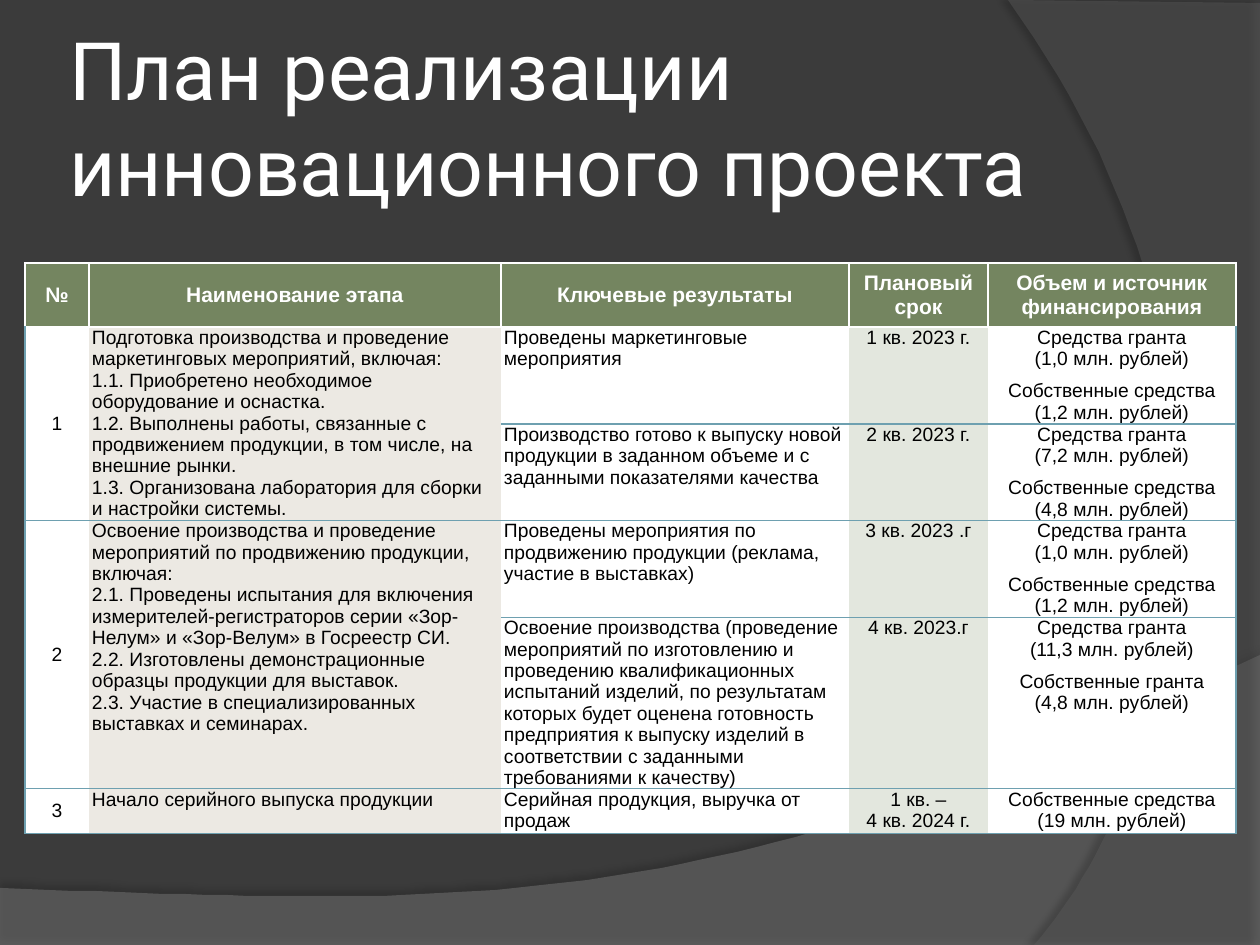
from copy import deepcopy
from dataclasses import dataclass

from lxml.etree import SubElement as Sub
from pptx import Presentation
from pptx.dml.color import RGBColor as RGB
from pptx.enum.text import MSO_ANCHOR as Anchor, MSO_AUTO_SIZE as Auto, PP_ALIGN as Align
from pptx.oxml.ns import qn
from pptx.util import Pt

SCALE = 914400 / 126
WHITE, BLACK, BLUE, GREEN = "FFFFFF", "000000", "6EA0B0", "748560"
COLS = [64, 412, 348, 139, 248]
ROWS = [64, 97, 96, 97, 171, 45]
TINTS = [WHITE, "ECE9E3", WHITE, "E3E7DE", WHITE]
HEAD = {"name": "Arial", "size": Pt(12), "bold": True}
BODY = {"name": "Arial", "size": Pt(11), "bold": False}
TITLE = {"name": "Roboto", "size": Pt(46), "bold": False}

# "\n" breaks a line, "|" starts a paragraph; None continues the cell above.
CELLS = [
    ["№", "Наименование этапа", "Ключевые результаты", "Плановый срок",
     "Объем и источник финансирования"],
    ["1",
     "Подготовка производства и проведение маркетинговых мероприятий, включая:\n"
     "1.1. Приобретено необходимое оборудование и оснастка.\n"
     "1.2. Выполнены работы, связанные с продвижением продукции, в том числе, "
     "на внешние рынки.\n"
     "1.3. Организована лаборатория для сборки и настройки системы.",
     "Проведены маркетинговые мероприятия",
     "1 кв. 2023 г.",
     "Средства гранта\n(1,0 млн. рублей)|Собственные средства\n(1,2 млн. рублей)"],
    [None, None,
     "Производство готово к выпуску новой продукции в заданном объеме и с "
     "заданными показателями качества",
     "2 кв. 2023 г.",
     "Средства гранта\n(7,2 млн. рублей)|Собственные средства\n(4,8 млн. рублей)"],
    ["2",
     "Освоение производства и проведение мероприятий по продвижению продукции,\n"
     "включая:\n"
     "2.1. Проведены испытания для включения измерителей-регистраторов серии "
     "«Зор-Нелум» и «Зор-Велум» в Госреестр СИ.\n"
     "2.2. Изготовлены демонстрационные образцы продукции для выставок.\n"
     "2.3. Участие в специализированных выставках и семинарах.",
     "Проведены мероприятия по продвижению продукции (реклама, участие в выставках)",
     "3 кв. 2023 .г",
     "Средства гранта\n(1,0 млн. рублей)|Собственные средства\n(1,2 млн. рублей)"],
    [None, None,
     "Освоение производства (проведение мероприятий по изготовлению и проведению "
     "квалификационных испытаний изделий, по результатам которых будет оценена "
     "готовность предприятия к выпуску изделий в соответствии с заданными "
     "требованиями к качеству)",
     "4 кв. 2023.г",
     "Средства гранта\n(11,3 млн. рублей)|Собственные гранта\n(4,8 млн. рублей)"],
    ["3", "Начало серийного выпуска продукции",
     "Серийная продукция, выручка от продаж",
     "1 кв. –\n4 кв. 2024 г.",
     "Собственные средства\n(19 млн. рублей)"],
]


@dataclass
class Wave:
    """Corner points, then cubic curves given as three points each."""
    start: list
    curves: list
    tint: str
    alpha: int
    shade: int
    dist: float
    angle: int


WAVES = [
    Wave([(0, 888), (0, 946), (1260, 946), (1260, 655)],
         [((704, 919), (493, 906), (0, 888))], "7F7F7F", 45, 35, 3.5, 270),
    Wave([(1260, 3), (1260, 945), (1034, 945)],
         [((1178, 780), (1283, 378), (1008, 0))], "5E5E5E", 40, 45, 4, 180),
]


def px(n: int) -> int:
    return round(n * SCALE)


def rgb(code: str) -> RGB:
    return RGB.from_string(code)


def put(obj, vals: dict) -> None:
    for key, val in vals.items():
        setattr(obj, key, val)


def paint(obj, code: str) -> None:
    obj.fill.solid()
    obj.fill.fore_color.rgb = rgb(code)


def bend(p0: tuple, curve: tuple, steps: int = 60) -> list:
    """Points along a cubic curve, without its start."""
    pts = (p0, *curve)
    out = []
    for i in range(1, steps + 1):
        t = i / steps
        u = 1 - t
        mix = (u ** 3, 3 * u * u * t, 3 * u * t * t, t ** 3)
        out.append(tuple(sum(m * p[k] for m, p in zip(mix, pts)) for k in (0, 1)))
    return out


def draw_wave(slide, wave: Wave) -> None:
    pts = list(wave.start)
    for curve in wave.curves:
        pts += bend(pts[-1], curve)
    pen = slide.shapes.build_freeform(*pts[0], scale=SCALE)
    pen.add_line_segments(pts[1:], close=True)
    shape = pen.convert_to_shape()
    paint(shape, wave.tint)
    shape.line.fill.background()
    shape.shadow.inherit = False
    props = shape.element.spPr
    tone = props.find(qn("a:solidFill"))[0]
    Sub(tone, qn("a:alpha"), val=str(wave.alpha * 1000))
    cast = Sub(props.find(qn("a:effectLst")), qn("a:outerShdw"), blurRad=str(Pt(4)),
               dist=str(Pt(wave.dist)), dir=str(wave.angle * 60000),
               algn="ctr", rotWithShape="0")
    tone = Sub(cast, qn("a:srgbClr"), val=BLACK)
    Sub(tone, qn("a:alpha"), val=str(wave.shade * 1000))


def write(frame, text: str, font: dict, code: str, align: Align) -> None:
    for i, part in enumerate(text.split("|")):
        para = frame.add_paragraph() if i else frame.paragraphs[0]
        para.text = part
        para.alignment = align
        if i:
            para.space_before = Pt(6)
        for run in para.runs:
            put(run.font, font)
            run.font.color.rgb = rgb(code)
        for gap in para._p.findall(qn("a:br")):
            gap.insert(0, deepcopy(para.runs[0]._r.rPr))


def edge(cell, sides: dict) -> None:
    """Draw the sides that have a colour and clear the others."""
    props = cell._tc.get_or_add_tcPr()
    for side in "LRTB":
        line = Sub(props, qn(f"a:ln{side}"), w=str(Pt(1)))
        if side in sides:
            Sub(Sub(line, qn("a:solidFill")), qn("a:srgbClr"), val=sides[side])
        else:
            Sub(line, qn("a:noFill"))


def dress(cell, row: int, col: int) -> None:
    if row == 0:
        edge(cell, dict.fromkeys("LRTB", WHITE))
    else:
        sides = {"T": WHITE if row == 1 else BLUE, "B": BLUE}
        sides |= {0: {"L": BLUE}, len(COLS) - 1: {"R": BLUE}}.get(col, {})
        edge(cell, sides)
    paint(cell, TINTS[col] if row else GREEN)
    mid = row == 0 or col == 0
    put(cell, {"margin_left": px(3), "margin_right": px(3), "margin_top": 0,
               "margin_bottom": 0,
               "vertical_anchor": Anchor.MIDDLE if mid else Anchor.TOP})


def draw_plan(slide) -> None:
    grid = slide.shapes.add_table(len(ROWS), len(COLS), px(25), px(263),
                                  px(sum(COLS)), px(sum(ROWS))).table
    grid.horz_banding = False
    for col, wide in zip(grid.columns, COLS):
        col.width = px(wide)
    for row, high in zip(grid.rows, ROWS):
        row.height = px(high)
    for r, line in enumerate(CELLS):
        for c, text in enumerate(line):
            cell = grid.cell(r, c)
            dress(cell, r, c)
            if text is None:
                grid.cell(r - 1, c).merge(cell)
                continue
            left = r > 0 and c in (1, 2)
            write(cell.text_frame, text, BODY if r else HEAD, BLACK if r else WHITE,
                  Align.LEFT if left else Align.CENTER)


def draw_title(slide) -> None:
    title = slide.shapes.title
    put(title, {"left": px(63), "top": px(38), "width": px(1029), "height": px(157)})
    frame = title.text_frame
    put(frame, {"word_wrap": True, "auto_size": Auto.NONE,
                "vertical_anchor": Anchor.MIDDLE})
    put(frame, {f"margin_{s}": px(6) for s in ("left", "right", "top", "bottom")})
    write(frame, "План реализации инновационного проекта", TITLE, WHITE, Align.LEFT)
    slide.shapes.element.append(title.element)


def main() -> None:
    deck = Presentation()
    put(deck, {"slide_width": px(1260), "slide_height": px(945)})
    slide = deck.slides.add_slide(deck.slide_layouts[5])
    paint(slide.background, "3B3B3B")
    for wave in WAVES:
        draw_wave(slide, wave)
    draw_title(slide)
    draw_plan(slide)
    deck.save("out.pptx")


if __name__ == "__main__":
    main()
